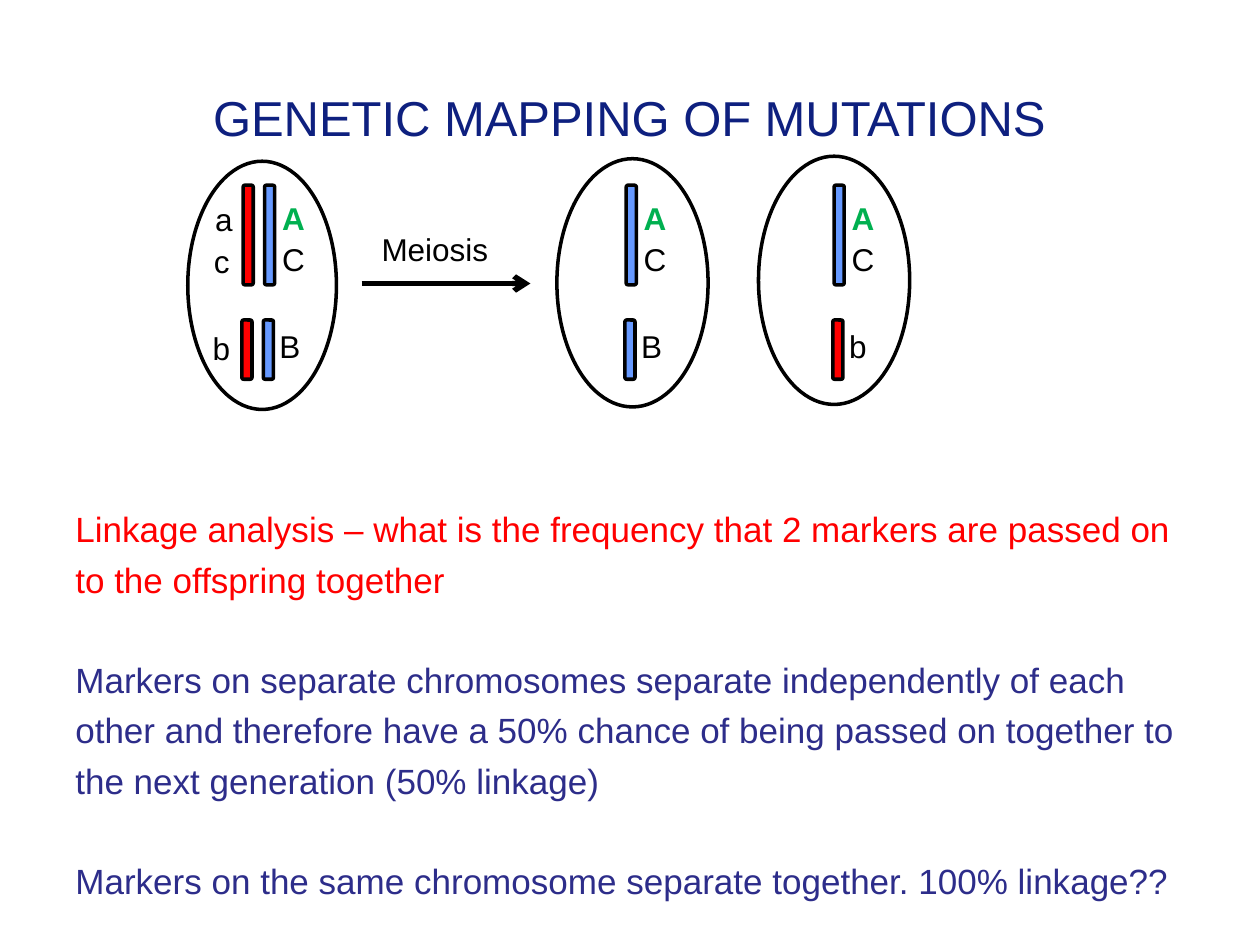
from lxml import etree
from pptx import Presentation
from pptx.dml.color import RGBColor
from pptx.enum.shapes import MSO_CONNECTOR, MSO_SHAPE
from pptx.enum.text import MSO_ANCHOR, PP_ALIGN
from pptx.oxml.ns import qn
from pptx.util import Inches, Pt

ROUNDED = MSO_SHAPE.ROUNDED_RECTANGLE
OVAL = MSO_SHAPE.OVAL
STRAIGHT = MSO_CONNECTOR.STRAIGHT
MIDDLE, TOP = MSO_ANCHOR.MIDDLE, MSO_ANCHOR.TOP
CENTER, LEFT = PP_ALIGN.CENTER, PP_ALIGN.LEFT

FONT = "Arial"
COLORS = {
    "title": "0E207F",
    "question": "FF0000",
    "answer": "2D2D8A",
    "red": "FF0000",
    "blue": "6699FF",
    "green": "00B050",
    "black": "000000",
}

STRAND_WIDTH = 0.08
STRANDS = [(0, 0, 0.79), (-0.01, 1.07, 0.47)]
LABEL_TOPS = [0.06, 0.39, 1.08]
LABEL_SIDES = {
    "left": ([-0.32, -0.33, -0.34], [0.34, 0.33, 0.34], 0.01),
    "right": ([0.04, 0.04, 0.02], [0.39, 0.39, 0.36], 0),
}

CELLS = [
    ((1.49, 1.28, 1.18, 1.97), 0.19, [
        (0.44, "left", "acb", ("red", "red")),
        (0.61, "right", "ACB", ("blue", "blue")),
    ]),
    ((4.42, 1.26, 1.2, 1.97), 0.21, [(0.55, "right", "ACB", ("blue", "blue"))]),
    ((6.02, 1.24, 1.2, 1.97), 0.23, [(0.6, "right", "ACb", ("blue", "red"))]),
]

STATEMENTS = [
    ("question", [
        "Linkage analysis – what is the frequency that 2 markers are passed on",
        "to the offspring together",
    ]),
    ("answer", [
        "Markers on separate chromosomes separate independently of each",
        "other and therefore have a 50% chance of being passed on together to",
        "the next generation (50% linkage)",
    ]),
    ("answer", ["Markers on the same chromosome separate together. 100% linkage??"]),
]


def rgb(name):
    return RGBColor.from_string(COLORS[name])


def style(paragraph, size, color, bold=False):
    font = paragraph.font
    font.name, font.size, font.bold = FONT, Pt(size), bold
    font.color.rgb = rgb(color)


def add_text(slide, box, text, size, color, bold=False, wrap=False, align=LEFT, anchor=TOP):
    frame = slide.shapes.add_textbox(*map(Inches, box)).text_frame
    frame.word_wrap = wrap
    frame.vertical_anchor = anchor
    paragraph = frame.paragraphs[0]
    paragraph.text = text
    paragraph.alignment = align
    style(paragraph, size, color, bold)


def add_outlined(slide, kind, box, fill=None):
    shape = slide.shapes.add_shape(kind, *map(Inches, box))
    shape.shadow.inherit = False
    if fill:
        shape.fill.solid()
        shape.fill.fore_color.rgb = rgb(fill)
    else:
        shape.fill.background()
    shape.line.color.rgb = rgb("black")
    shape.line.width = Pt(2)


def draw_chromosomes(slide, left, top, side, markers, fills):
    for (dx, dy, height), fill in zip(STRANDS, fills):
        add_outlined(slide, ROUNDED, (left + dx, top + dy, STRAND_WIDTH, height), fill)
    offsets, widths, drop = LABEL_SIDES[side]
    for marker, dx, dy, width in zip(markers, offsets, LABEL_TOPS, widths):
        mutated = marker == "A"
        add_text(slide, (left + dx, top + dy + drop, width, 0.4), marker, 18,
                 "green" if mutated else "black", bold=mutated)


def draw_cell(slide, box, inset, chromosomes):
    left, top = box[:2]
    for dx, side, markers, fills in chromosomes:
        draw_chromosomes(slide, left + dx, top + inset, side, markers, fills)
    add_outlined(slide, OVAL, box)


def draw_meiosis(slide, left, top, width, height):
    add_text(slide, (left + 0.06, top, 1.06, 0.4), "Meiosis", 18, "black")
    ends = (left, top + height, left + width, top + height)
    arrow = slide.shapes.add_connector(STRAIGHT, *map(Inches, ends))
    arrow.line.color.rgb = rgb("black")
    arrow.line.width = Pt(3)
    etree.SubElement(arrow.line._get_or_add_ln(), qn("a:tailEnd"), type="arrow")
    etree.SubElement(arrow._element.spPr, qn("a:effectLst"))


def draw_statements(slide, box):
    frame = slide.shapes.add_textbox(*map(Inches, box)).text_frame
    frame.word_wrap = True
    paragraph = frame.paragraphs[0]
    for number, (color, lines) in enumerate(STATEMENTS):
        for row, line in enumerate(lines):
            if number or row:
                paragraph = frame.add_paragraph()
                paragraph.space_before = Pt(5 if row else 33)
            paragraph.text = line
            style(paragraph, 20, color)


def main():
    presentation = Presentation()
    presentation.slide_width, presentation.slide_height = Inches(10), Inches(7.5)
    slide = presentation.slides.add_slide(presentation.slide_layouts[6])
    add_text(slide, (0.62, 0.3, 8.75, 1.25), "GENETIC MAPPING OF MUTATIONS", 28, "title",
             wrap=True, align=CENTER, anchor=MIDDLE)
    for box, inset, chromosomes in CELLS:
        draw_cell(slide, box, inset, chromosomes)
    draw_meiosis(slide, 2.87, 1.78, 1.34, 0.47)
    draw_statements(slide, (0.5, 3.98, 9, 3.15))
    presentation.save("out.pptx")


if __name__ == "__main__":
    main()
